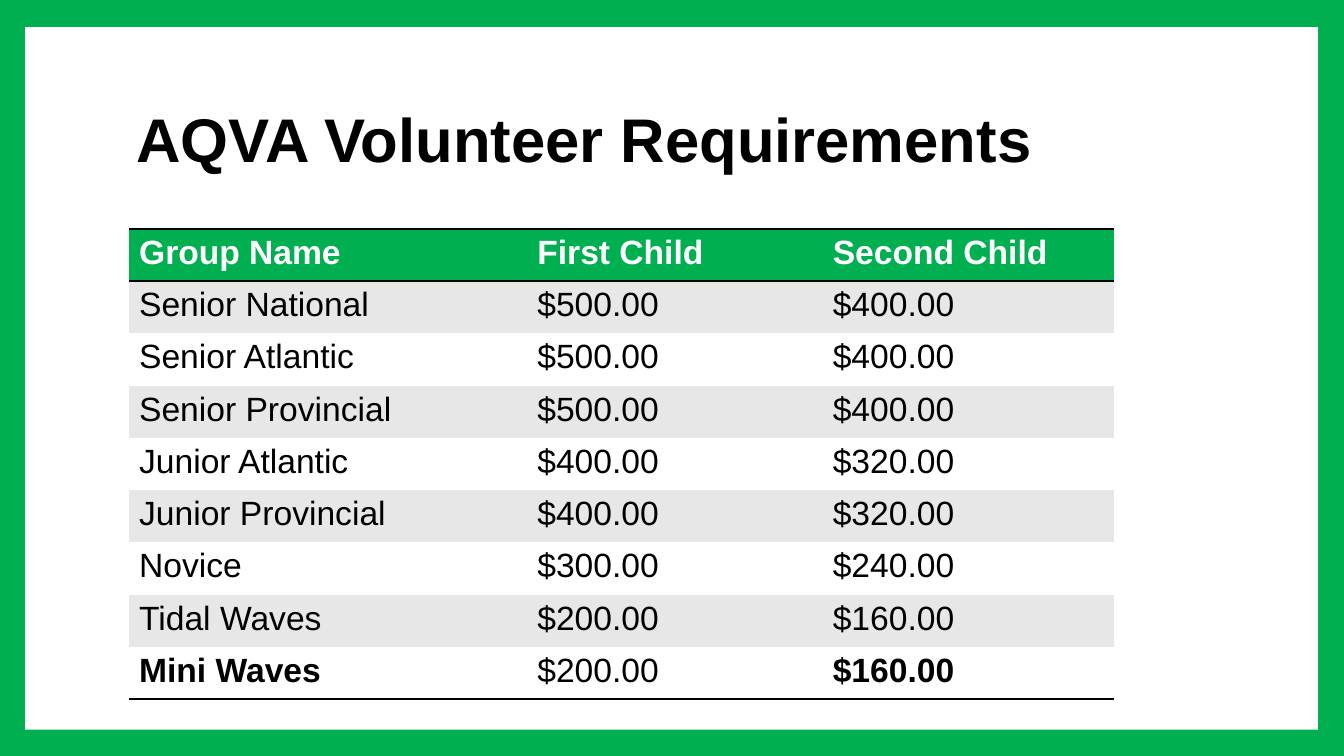
from lxml.etree import SubElement
from pptx import Presentation
from pptx.dml.color import RGBColor
from pptx.enum.shapes import MSO_SHAPE as Shape
from pptx.enum.text import MSO_ANCHOR as Anchor, PP_ALIGN as Align
from pptx.oxml.ns import qn
from pptx.util import Inches, Pt

GREEN, GREY, WHITE, BLACK = "00B050", "E7E7E7", "FFFFFF", "000000"
FONT = "Arial"
NO_STYLE_NO_GRID = "{2D5ABB26-0587-4C30-8999-92F81FD0307C}"
COLUMN_WIDTHS = (3.95, 2.93, 2.89)
VOLUNTEER_ROWS = [
    ("Group Name", "First Child", "Second Child"),
    ("Senior National", "$500.00", "$400.00"),
    ("Senior Atlantic", "$500.00", "$400.00"),
    ("Senior Provincial", "$500.00", "$400.00"),
    ("Junior Atlantic", "$400.00", "$320.00"),
    ("Junior Provincial", "$400.00", "$320.00"),
    ("Novice", "$300.00", "$240.00"),
    ("Tidal Waves", "$200.00", "$160.00"),
    ("Mini Waves", "$200.00", "$160.00"),
]
BOLD_LAST_ROW_COLUMNS = (0, 2)


def set_fill(target, color):
    target.fill.solid()
    target.fill.fore_color.rgb = RGBColor.from_string(color)


def format_runs(paragraph, size, color, bold):
    for run in paragraph.runs:
        run.font.name = FONT
        run.font.size = Pt(size)
        run.font.bold = bold
        run.font.color.rgb = RGBColor.from_string(color)


def add_border(cell, side, color=BLACK, width=2):
    properties = cell._tc.get_or_add_tcPr()
    line = SubElement(properties, qn(f"a:{side}"), w=str(Pt(width)))
    fill = SubElement(line, qn("a:solidFill"))
    SubElement(fill, qn("a:srgbClr"), val=color)


def add_panel(slide, left, top, width, height):
    panel = slide.shapes.add_shape(
        Shape.RECTANGLE, Inches(left), Inches(top), Inches(width), Inches(height))
    panel.shadow.inherit = False
    set_fill(panel, WHITE)
    panel.line.fill.background()
    # Keep the panel behind the title
    slide.shapes.title.element.addprevious(panel.element)


def set_title(slide, text, left, top, width, height):
    title = slide.shapes.title
    title.left, title.top = Inches(left), Inches(top)
    title.width, title.height = Inches(width), Inches(height)
    frame = title.text_frame
    frame.text = text
    frame.word_wrap = True
    frame.vertical_anchor = Anchor.MIDDLE
    paragraph = frame.paragraphs[0]
    paragraph.alignment = Align.LEFT
    paragraph.line_spacing = 0.9
    format_runs(paragraph, 44, BLACK, True)


def add_volunteer_table(slide, left, top, width, height):
    last_row = len(VOLUNTEER_ROWS) - 1
    frame = slide.shapes.add_table(
        len(VOLUNTEER_ROWS), len(COLUMN_WIDTHS),
        Inches(left), Inches(top), Inches(width), Inches(height))
    table = frame.table
    table._tbl.tblPr.find(qn("a:tableStyleId")).text = NO_STYLE_NO_GRID
    for column, share in zip(table.columns, COLUMN_WIDTHS):
        column.width = Inches(width * share / sum(COLUMN_WIDTHS))

    for row_index, values in enumerate(VOLUNTEER_ROWS):
        is_header = row_index == 0
        band = GREEN if is_header else (GREY if row_index % 2 else WHITE)
        for column_index, value in enumerate(values):
            cell = table.cell(row_index, column_index)
            cell.text_frame.text = value
            bold = is_header or (
                row_index == last_row and column_index in BOLD_LAST_ROW_COLUMNS)
            format_runs(cell.text_frame.paragraphs[0], 24,
                        WHITE if is_header else BLACK, bold)
            # Rules around the header and under the last row
            if is_header:
                add_border(cell, "lnT")
            if row_index in (0, last_row):
                add_border(cell, "lnB")
            set_fill(cell, band)


def build_requirements_slide(presentation):
    slide = presentation.slides.add_slide(presentation.slide_layouts[5])
    set_fill(slide.background, GREEN)
    add_panel(slide, 0.25, 0.27, 12.82, 6.97)
    set_title(slide, "AQVA Volunteer Requirements", 1.25, 0.67, 10.8, 1.48)
    add_volunteer_table(slide, 1.28, 2.27, 9.77, 4.67)


def main():
    presentation = Presentation()
    presentation.slide_width = Inches(13.33)
    presentation.slide_height = Inches(7.5)
    build_requirements_slide(presentation)
    presentation.save("out.pptx")


if __name__ == "__main__":
    main()
